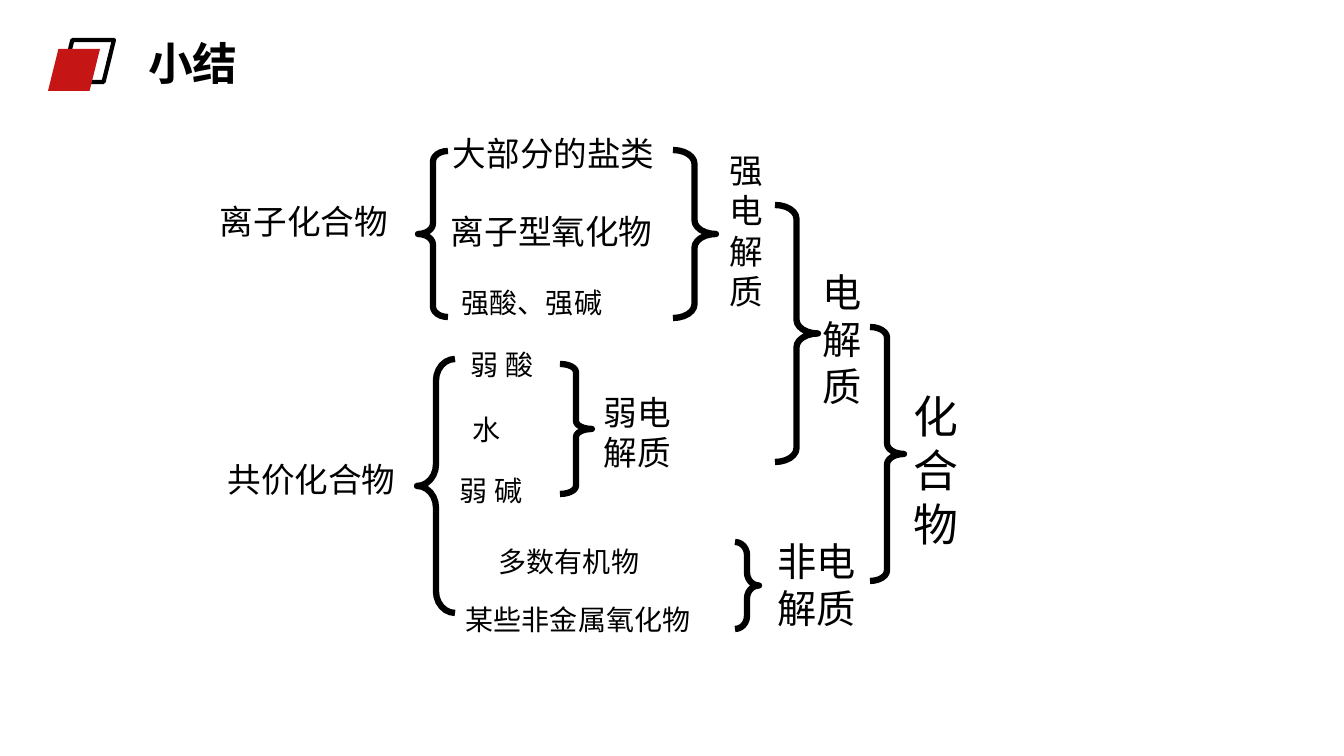
"""Builds the summary slide that classifies compounds with a tree of braces."""
from dataclasses import dataclass

from pptx import Presentation, util as u
from pptx.dml.color import RGBColor
from pptx.enum import shapes, text

SHAPE = shapes.MSO_SHAPE
PX = 914400 / 100.8


@dataclass(frozen=True)
class Theme:
    font: str = "Arial"
    ink: RGBColor = RGBColor(0, 0, 0)
    accent: RGBColor = RGBColor(0xC5, 0x15, 0x15)
    small: int = 20
    body: int = 24
    large: int = 28
    top: int = 32
    frame_line: float = 3
    brace_line: float = 4.5


class Deck:
    def __init__(self, theme, width, height):
        self.theme = theme
        self.prs = Presentation()
        self.prs.slide_width, self.prs.slide_height = self.px(width, height)
        self.s = self.prs.slides.add_slide(self.prs.slide_layouts[5])

    def px(self, *lengths):
        return [u.Emu(round(n * PX)) for n in lengths]

    def set_text(self, sp, words, size, bold=False, align=text.PP_ALIGN.LEFT):
        tf = sp.text_frame
        tf.text = words
        tf.word_wrap = True
        tf.auto_size = text.MSO_AUTO_SIZE.NONE
        tf.vertical_anchor = text.MSO_ANCHOR.TOP
        p = tf.paragraphs[0]
        p.alignment = align
        font = p.runs[0].font
        font.name, font.size, font.bold = self.theme.font, u.Pt(size), bold
        font.color.rgb = self.theme.ink

    def title(self, words, x, y, w, h):
        sp = self.s.shapes.title
        sp.left, sp.top, sp.width, sp.height = self.px(x, y, w, h)
        self.set_text(sp, words, self.theme.top, bold=True)

    def label(self, words, size, x, y, w, h, align=text.PP_ALIGN.LEFT):
        sp = self.s.shapes.add_textbox(*self.px(x, y, w, h))
        self.set_text(sp, words, size, align=align)

    def shape(self, kind, x, y, w, h, fill=None, line=None):
        sp = self.s.shapes.add_shape(kind, *self.px(x, y, w, h))
        sp.shadow.inherit = False
        if fill is None:
            sp.fill.background()
        else:
            sp.fill.solid()
            sp.fill.fore_color.rgb = fill
        if line is None:
            sp.line.fill.background()
        else:
            sp.line.color.rgb = self.theme.ink
            sp.line.width = u.Pt(line)
        return sp

    def brace(self, kind, curve, x, y, w, h):
        sp = self.shape(kind, x, y, w, h, line=self.theme.brace_line)
        sp.adjustments[0] = curve
        sp.adjustments[1] = 0.5


def main():
    theme = Theme()
    deck = Deck(theme, 1344, 756)

    deck.shape(SHAPE.FLOWCHART_DATA, 62, 40, 52, 42, line=theme.frame_line)
    deck.shape(SHAPE.FLOWCHART_DATA, 48, 49, 52, 42, fill=theme.accent)
    deck.title("小结", 138, 31, 764, 65)

    deck.label("共价化合物", theme.body, 203, 454, 217, 50, text.PP_ALIGN.CENTER)
    for label in (
        ("离子化合物", theme.body, 210, 196, 211, 50),
        ("大部分的盐类", theme.body, 443, 128, 285, 50),
        ("离子型氧化物", theme.body, 441, 206, 332, 50),
        ("强酸、强碱", theme.small, 452, 281, 252, 44),
        ("弱 酸", theme.small, 461, 343, 155, 44),
        ("水", theme.small, 463, 408, 145, 44),
        ("弱 碱", theme.small, 450, 469, 155, 44),
        ("多数有机物", theme.small, 489, 540, 217, 44),
        ("某些非金属氧化物", theme.small, 456, 598, 297, 44),
        ("强电解质", theme.body, 720, 145, 75, 173),
        ("弱电解质", theme.body, 594, 387, 118, 92),
        ("电解质", theme.large, 813, 263, 62, 152),
        ("非电解质", theme.large, 768, 532, 107, 105),
        ("化合物", theme.top, 904, 384, 55, 173),
    ):
        deck.label(*label)

    for brace in (
        (SHAPE.LEFT_BRACE, 0.35, 418, 151, 30, 166),
        (SHAPE.LEFT_BRACE, 0.57, 417, 359, 38, 254),
        (SHAPE.RIGHT_BRACE, 0.32, 673, 150, 43, 168),
        (SHAPE.RIGHT_BRACE, 0.25, 560, 364, 32, 130),
        (SHAPE.RIGHT_BRACE, 0.32, 775, 205, 43, 257),
        (SHAPE.RIGHT_BRACE, 0.54, 735, 542, 24, 87),
        (SHAPE.RIGHT_BRACE, 0.31, 870, 327, 34, 254),
    ):
        deck.brace(*brace)

    deck.prs.save("out.pptx")


if __name__ == "__main__":
    main()
